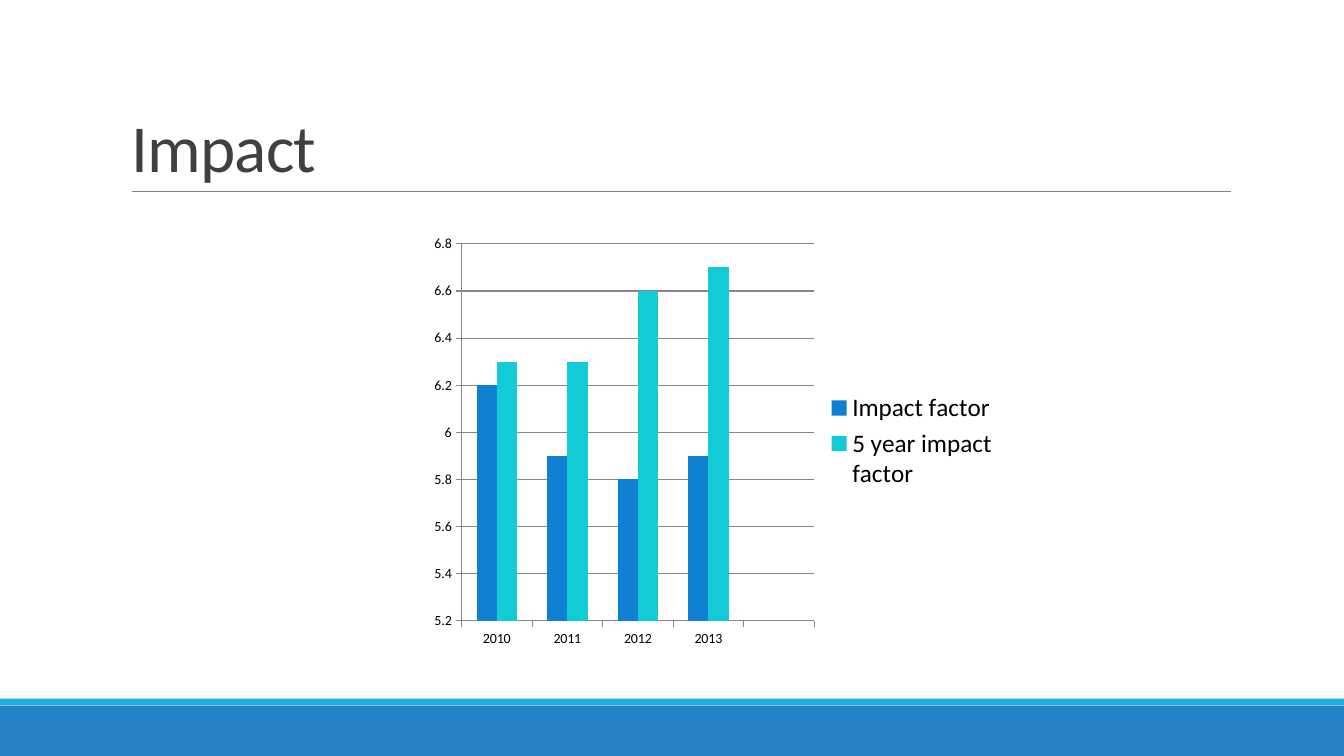
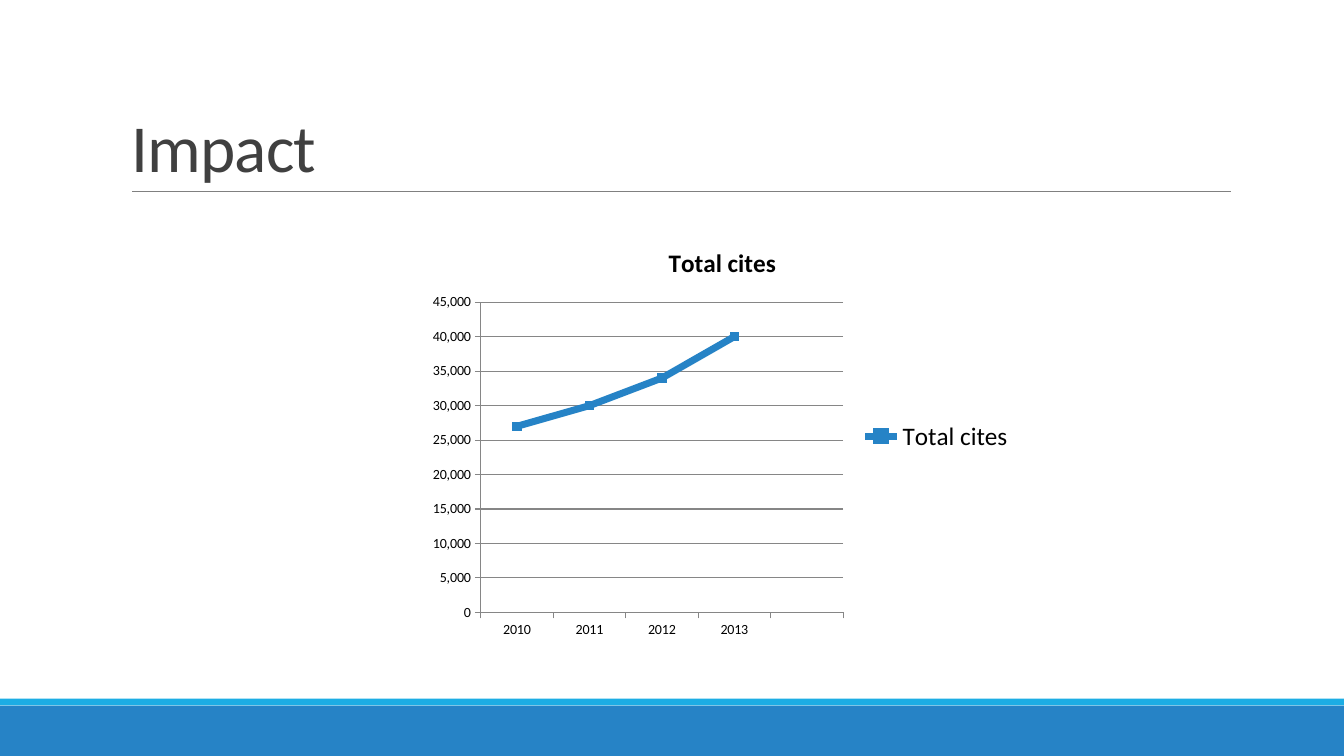
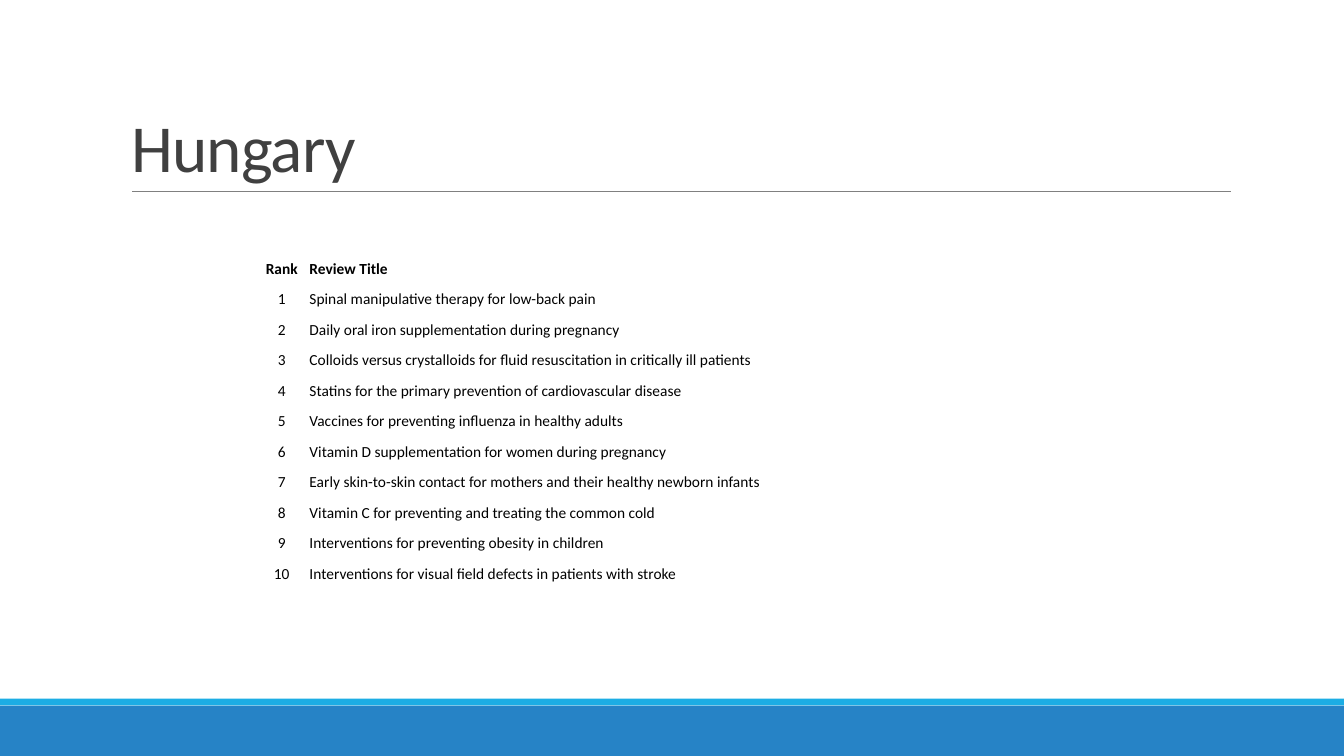
import pptx
import pptx.util
import pptx.dml.color
import pptx.chart.data
import pptx.enum.chart
import pptx.enum.shapes
import pptx.enum.text
import pptx.oxml
import pptx.oxml.ns
import lxml.etree

Pt = pptx.util.Pt
qn = pptx.oxml.ns.qn
enum = pptx.enum
WIDE = pptx.util.Inches(13.33)
HIGH = pptx.util.Inches(7.5)
FONT = "Calibri"
HUES = {
    "base": "2683C6", "strip": "1CADE4", "rule": "808080", "head": "404040",
    "text": "000000", "grid": "868686", "blue": "0F80D2", "teal": "12CBD4",
}
YEARS = ["2010", "2011", "2012", "2013", ""]
REVIEWS = [
    "Spinal manipulative therapy for low-back pain",
    "Daily oral iron supplementation during pregnancy",
    "Colloids versus crystalloids for fluid resuscitation in critically ill patients",
    "Statins for the primary prevention of cardiovascular disease",
    "Vaccines for preventing influenza in healthy adults",
    "Vitamin D supplementation for women during pregnancy",
    "Early skin-to-skin contact for mothers and their healthy newborn infants",
    "Vitamin C for preventing and treating the common cold",
    "Interventions for preventing obesity in children",
    "Interventions for visual field defects in patients with stroke",
]


def hue(name):
    return pptx.dml.color.RGBColor.from_string(HUES[name])


def share(left, top, width, height):
    return (int(WIDE * left / 100), int(HIGH * top / 100),
            int(WIDE * width / 100), int(HIGH * height / 100))


def style(font, size, tint="text", bold=False):
    font.name = FONT
    font.size = Pt(size)
    font.bold = bold
    font.color.rgb = hue(tint)


def write(para, text, size, tint="text", bold=False):
    run = para.add_run()
    run.text = text
    style(run.font, size, tint, bold)


def place(shape, box):
    shape.left, shape.top, shape.width, shape.height = box


def frame(layout, slide):
    parts = []
    for box, tint in ((share(0, 93.33, 100, 6.67), "base"),
                      (share(0, 92.4, 100, 0.9), "strip")):
        band = slide.shapes.add_shape(enum.shapes.MSO_SHAPE.RECTANGLE, *box)
        band.shadow.inherit = False
        band.fill.solid()
        band.fill.fore_color.rgb = hue(tint)
        band.line.fill.background()
        parts.append(band)
    left, top, width, drop = share(9.83, 25.33, 81.77, 0)
    rule = slide.shapes.add_connector(
        enum.shapes.MSO_CONNECTOR.STRAIGHT, left, top, left + width, top + drop)
    rule.line.color.rgb = hue("rule")
    rule.line.width = Pt(0.5)
    lxml.etree.SubElement(rule.element.spPr, qn("a:effectLst"))
    parts.append(rule)
    for part in parts:
        layout.shapes.element.append(part.element)
    place(layout.placeholders[0], share(9, 4.13, 82.5, 21.2))


def head(slide, text):
    title = slide.shapes.title
    body = title.text_frame
    body.word_wrap = True
    body.auto_size = enum.text.MSO_AUTO_SIZE.NONE
    body.vertical_anchor = enum.text.MSO_ANCHOR.BOTTOM
    para = body.paragraphs[0]
    para.alignment = enum.text.PP_ALIGN.LEFT
    para.line_spacing = 0.85
    write(para, text, 48, "head")
    for props in title.element.iter(qn("a:rPr")):
        props.set("spc", "-50")


def inset(chart, area):
    plot = chart.element.find(".//" + qn("c:plotArea"))
    for old in plot.findall(qn("c:layout")):
        plot.remove(old)
    outer = lxml.etree.Element(qn("c:layout"))
    inner = lxml.etree.SubElement(outer, qn("c:manualLayout"))
    pairs = [("layoutTarget", "inner"), ("xMode", "edge"), ("yMode", "edge")]
    for tag, value in pairs + list(zip("xywh", area)):
        lxml.etree.SubElement(inner, qn("c:" + tag)).set("val", str(value))
    plot.insert(0, outer)


def graph(slide, box, kind, rows, area, scale, form):
    data = pptx.chart.data.CategoryChartData()
    data.categories = YEARS
    for name, vals in rows:
        data.add_series(name, vals + [None])
    chart = slide.shapes.add_chart(kind, *box, data).chart
    style(chart.font, 10)
    chart.has_title = False
    chart.has_legend = True
    chart.legend.position = enum.chart.XL_LEGEND_POSITION.RIGHT
    chart.legend.include_in_layout = False
    style(chart.legend.font, 18)
    chart.plots[0].vary_by_categories = False
    inset(chart, area)
    axis = chart.value_axis
    axis.minimum_scale, axis.maximum_scale, axis.major_unit = scale
    axis.has_major_gridlines = True
    axis.tick_labels.number_format = form
    axis.tick_labels.number_format_is_linked = False
    for side in (axis, chart.category_axis):
        side.major_tick_mark = enum.chart.XL_TICK_MARK.OUTSIDE
        side.format.line.color.rgb = hue("grid")
    axis.major_gridlines.format.line.color.rgb = hue("grid")
    return chart


def bars(slide, box):
    rows = [("Impact factor", [6.2, 5.9, 5.8, 5.9]),
            ("5 year impact factor", [6.3, 6.3, 6.6, 6.7])]
    chart = graph(slide, box, enum.chart.XL_CHART_TYPE.COLUMN_CLUSTERED, rows,
                  (0.07, 0.04, 0.6, 0.88), (5.2, 6.8, 0.2), "General")
    plot = chart.plots[0]
    plot.gap_width = 150
    plot.overlap = 0
    for item, tint in zip(plot.series, ("blue", "teal")):
        item.format.fill.solid()
        item.format.fill.fore_color.rgb = hue(tint)


def trend(slide, box):
    name = "Total cites"
    chart = graph(slide, box, enum.chart.XL_CHART_TYPE.LINE_MARKERS,
                  [(name, [27000, 30000, 34000, 40000])],
                  (0.1, 0.18, 0.6, 0.74), (0, 45000, 5000), "#,##0")
    chart.has_title = True
    write(chart.chart_title.text_frame.paragraphs[0], name, 18, bold=True)
    chart.chart_title.include_in_layout = False
    item = chart.plots[0].series[0]
    item.smooth = False
    item.format.line.color.rgb = hue("base")
    item.format.line.width = Pt(5)
    mark = item.marker
    mark.style = enum.chart.XL_MARKER_STYLE.SQUARE
    mark.size = 6
    mark.format.fill.solid()
    mark.format.fill.fore_color.rgb = hue("base")
    mark.format.line.color.rgb = hue("base")


def ranks(slide, box):
    rows = [("Rank", "Review Title")]
    rows += [(str(rank), name) for rank, name in enumerate(REVIEWS, 1)]
    grid = slide.shapes.add_table(len(rows), 2, *box).table
    grid.first_row = False
    grid.horz_banding = False
    for col, part in zip(grid.columns, (0.075, 0.925)):
        col.width = int(box[2] * part)
    aligns = (enum.text.PP_ALIGN.CENTER, enum.text.PP_ALIGN.LEFT)
    for r, row in enumerate(rows):
        for c, text in enumerate(row):
            cell = grid.cell(r, c)
            cell.fill.background()
            cell.vertical_anchor = enum.text.MSO_ANCHOR.BOTTOM
            cell.margin_left = cell.margin_right = cell.margin_top = Pt(0.75)
            cell.margin_bottom = 0
            para = cell.text_frame.paragraphs[0]
            para.alignment = aligns[c]
            write(para, text, 11, bold=r == 0)


def main():
    deck = pptx.Presentation()
    deck.slide_width, deck.slide_height = WIDE, HIGH
    layout = deck.slide_layouts[5]
    pages = [
        ("Impact", bars, share(31.28, 30, 43.74, 56.67)),
        ("Impact", trend, share(31.28, 30, 44.93, 55.47)),
        ("Hungary", ranks, share(18.98, 32.8, 52.96, 44.4)),
    ]
    for count, (text, draw, box) in enumerate(pages):
        slide = deck.slides.add_slide(layout)
        if count == 0:
            frame(layout, slide)
        head(slide, text)
        draw(slide, box)
    deck.save("out.pptx")


if __name__ == "__main__":
    main()
